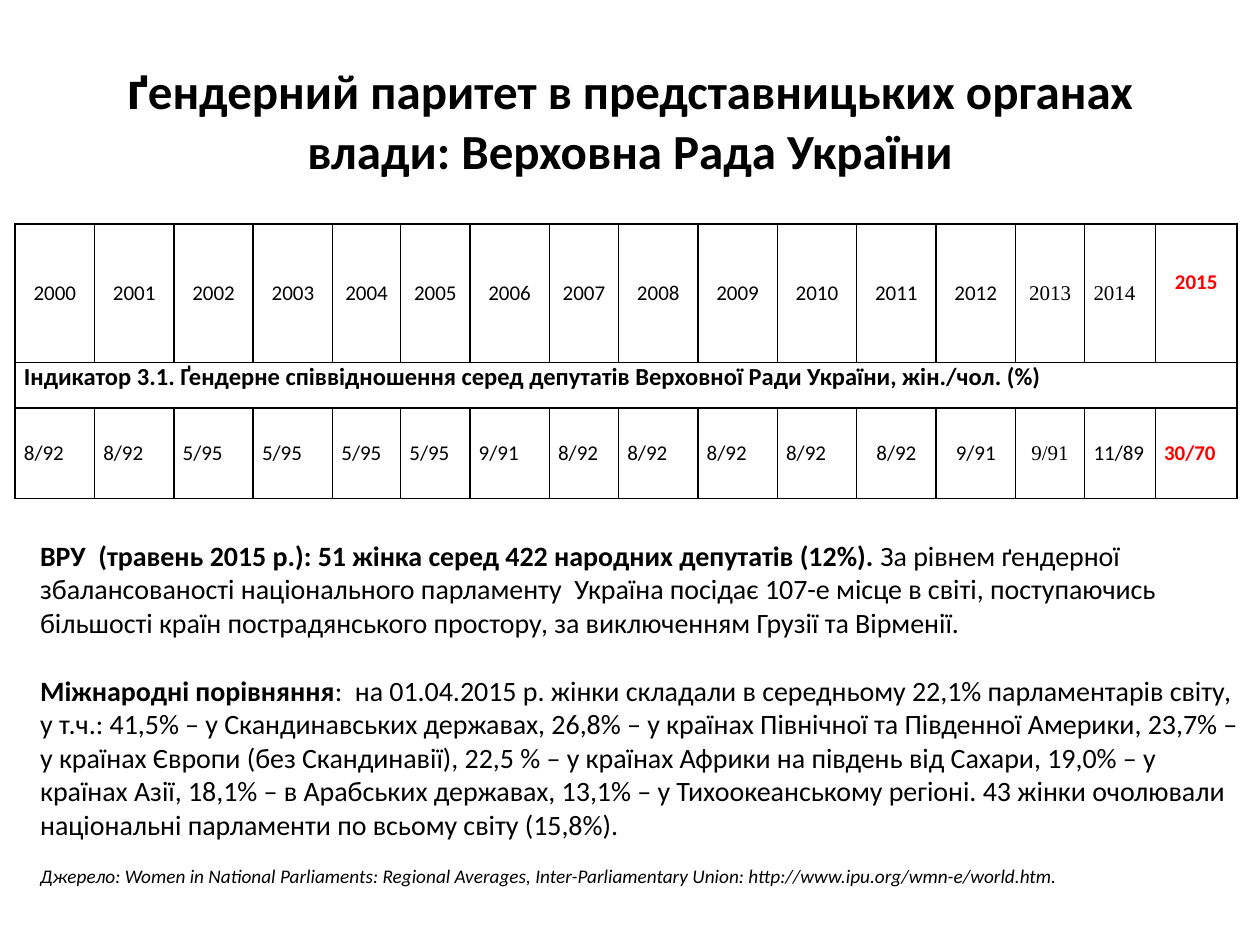
from pptx import Presentation
from pptx.dml.color import RGBColor
from pptx.enum.text import MSO_ANCHOR, PP_ALIGN
from pptx.oxml import parse_xml
from pptx.oxml.ns import nsdecls
from pptx.util import Inches, Pt

WIDTH, HEIGHT = 10, 7.5
CENTER, LEFT = PP_ALIGN.CENTER, PP_ALIGN.LEFT
SERIF = "Times New Roman"
RED = "FF0000"

TITLE = "ендерний паритет в представницьких органах влади: Верховна Рада України"
INDICATOR = "Індикатор 3.1. Ґендерне співвідношення серед депутатів Верховної Ради України, жін./чол. (%)"
RATIOS = ["8/92"] * 2 + ["5/95"] * 4 + ["9/91"] + ["8/92"] * 5 + ["9/91"] * 2 + ["11/89", "30/70"]
COLUMNS = [0.63] * 4 + [0.54, 0.55, 0.63, 0.55] + [0.63] * 5 + [0.55, 0.56, 0.65]
ROWS = [1.1, 0.36, 0.72]

PARLIAMENT = "ВРУ  (травень 2015 р.): 51 жінка серед 422 народних депутатів (12%). "
RANKING = (
    "За рівнем ґендерної збалансованості національного парламенту  Україна посідає 107-е місце "
    "в світі, поступаючись більшості країн пострадянського простору, за виключенням Грузії та Вірменії."
)
COMPARISON = "Міжнародні порівняння"
REGIONS = (
    ":  на 01.04.2015 р. жінки складали в середньому 22,1% парламентарів світу, у т.ч.: "
    "41,5% – у Скандинавських державах, 26,8% – у країнах Північної та Південної Америки, "
    "23,7% – у країнах Європи (без Скандинавії), 22,5 % – у країнах Африки на південь від Сахари, "
    "19,0% – у країнах Азії, 18,1% – в Арабських державах, 13,1% – у Тихоокеанському регіоні. "
    "43 жінки очолювали національні парламенти по всьому світу (15,8%)."
)
SOURCE = (
    "Джерело: Women in National Parliaments: Regional Averages, Inter-Parliamentary Union: "
    "http://www.ipu.org/wmn-e/world.htm."
)


def rgb(value):
    return RGBColor.from_string(value)


def add_text(p, text, size=12, font="Calibri", color="000000", bold=False, italic=False):
    r = p.add_run()
    r.text = text
    r.font.size = Pt(size)
    r.font.name = font
    r.font.color.rgb = rgb(color)
    r.font.bold = bold
    r.font.italic = italic


class Page:
    border_color = "000000"
    border_width = 1
    cell_margin = 0.07

    def __init__(self, prs):
        self.s = prs.slides.add_slide(prs.slide_layouts[5])

    def box(self, x, y, w, h):
        return [Inches(WIDTH * x), Inches(HEIGHT * y), Inches(WIDTH * w), Inches(HEIGHT * h)]

    def title(self, runs, *shares):
        sp = self.s.shapes.title
        sp.left, sp.top, sp.width, sp.height = self.box(*shares)
        tf = sp.text_frame
        tf.vertical_anchor = MSO_ANCHOR.MIDDLE
        p = tf.paragraphs[0]
        p.alignment = CENTER
        for text, size in runs:
            add_text(p, text, size=size, bold=True)

    def body(self, paragraphs, *shares):
        tf = self.s.shapes.add_textbox(*self.box(*shares)).text_frame
        tf.word_wrap = True
        for i, (gap, runs) in enumerate(paragraphs):
            p = tf.add_paragraph() if i else tf.paragraphs[0]
            p.space_before = Pt(gap)
            for text, style in runs:
                add_text(p, text, **style)

    def table(self, columns, rows, x, y):
        shares = x, y, sum(columns) / WIDTH, sum(rows) / HEIGHT
        frame = self.s.shapes.add_table(len(rows), len(columns), *self.box(*shares))
        table = frame.table
        table.first_row = table.horz_banding = False
        for column, width in zip(table.columns, columns):
            column.width = Inches(width)
        for row, height in zip(table.rows, rows):
            row.height = Inches(height)
        for cell in table.iter_cells():
            self.borders(cell)
            cell.fill.background()
            cell.margin_left = cell.margin_right = Inches(self.cell_margin)
            cell.margin_top = cell.margin_bottom = 0
        return table

    def borders(self, cell):
        props = cell._tc.get_or_add_tcPr()
        for side in ("lnL", "lnR", "lnT", "lnB"):
            props.append(parse_xml(
                f'<a:{side} {nsdecls("a")} w="{Pt(self.border_width)}"><a:solidFill>'
                f'<a:srgbClr val="{self.border_color}"/></a:solidFill></a:{side}>'
            ))

    def cell(self, cell, text, align=LEFT, anchor=MSO_ANCHOR.MIDDLE, **style):
        cell.vertical_anchor = anchor
        p = cell.text_frame.paragraphs[0]
        p.alignment = align
        p.space_before = p.space_after = Pt(6)
        add_text(p, text, **style)


def main():
    prs = Presentation()
    prs.slide_width, prs.slide_height = Inches(WIDTH), Inches(HEIGHT)
    page = Page(prs)
    page.title([("ґ", 32), (TITLE, 28)], 0.05, 0.04, 0.9, 0.167)

    table = page.table(COLUMNS, ROWS, 0.012, 0.237)
    table.cell(1, 0).merge(table.cell(1, len(COLUMNS) - 1))
    page.cell(table.cell(1, 0), INDICATOR, anchor=MSO_ANCHOR.TOP, size=14, bold=True)
    for i, ratio in enumerate(RATIOS):
        year = 2000 + i
        style = {"color": RED, "bold": True} if year == 2015 else {}
        year_font = SERIF if year in (2013, 2014) else "Calibri"
        ratio_font = SERIF if year == 2013 else "Calibri"
        year_align = LEFT if year == 2014 else CENTER
        ratio_align = CENTER if 2011 <= year <= 2013 else LEFT
        page.cell(table.cell(0, i), str(year), year_align, font=year_font, **style)
        page.cell(table.cell(2, i), ratio, ratio_align, font=ratio_font, **style)
    latest = table.cell(0, len(COLUMNS) - 1)
    latest.vertical_anchor = MSO_ANCHOR.TOP
    latest.margin_top = Inches(0.36)

    plain, strong = {"size": 16}, {"size": 16, "bold": True}
    page.body([
        (0, [(PARLIAMENT, strong), (RANKING, plain)]),
        (19.5, [(COMPARISON, strong), (REGIONS, plain)]),
        (13.4, [(SOURCE, {"size": 11, "italic": True})]),
    ], 0.022, 0.563, 0.978, 0.427)
    prs.save("out.pptx")


if __name__ == "__main__":
    main()
